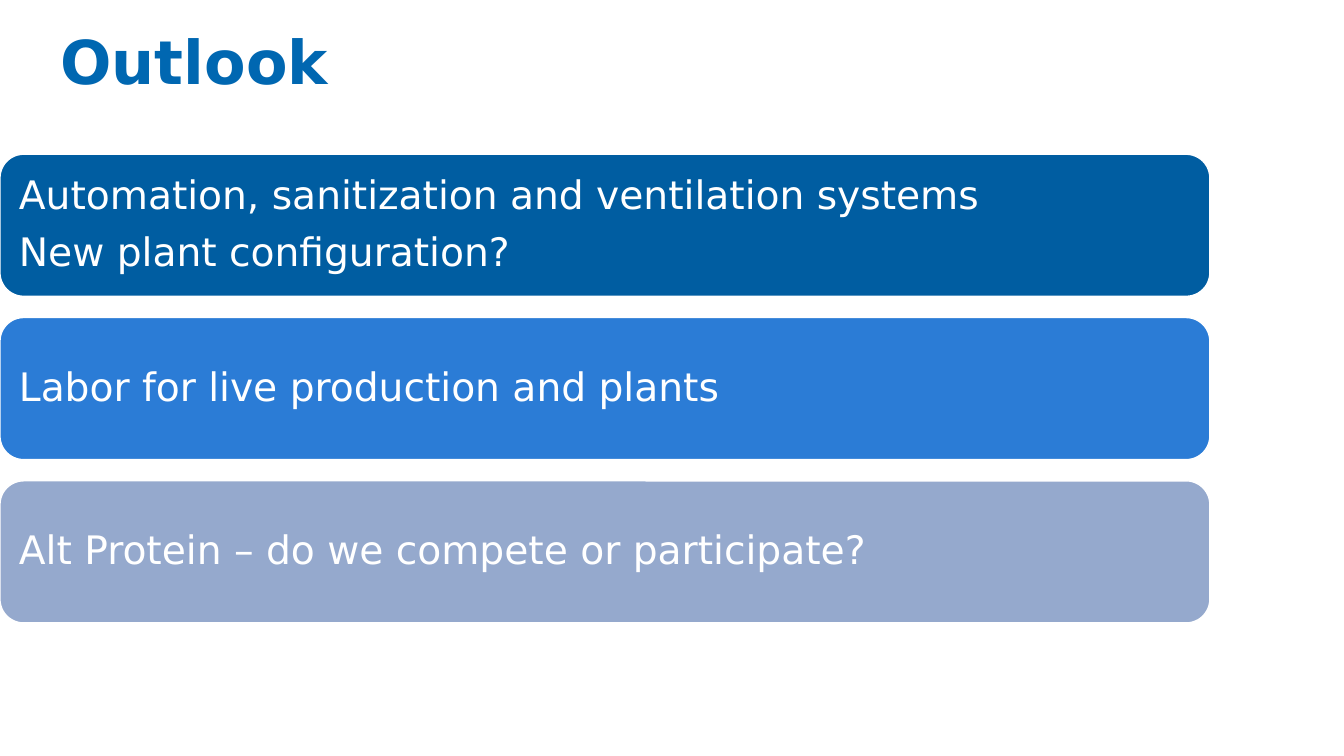
from pptx import Presentation
from pptx.dml.color import RGBColor
from pptx.enum.shapes import MSO_SHAPE
from pptx.enum.text import MSO_ANCHOR, PP_ALIGN
from pptx.util import Inches, Pt

WHITE = RGBColor(0xFF, 0xFF, 0xFF)
TITLE_BLUE = RGBColor(0x00, 0x67, 0xB1)
DEEP_BLUE = RGBColor(0x00, 0x5D, 0xA1)
BRIGHT_BLUE = RGBColor(0x2B, 0x7C, 0xD6)
PALE_BLUE = RGBColor(0x95, 0xA9, 0xCD)
FONT = "DejaVu Sans"

TITLE = "Outlook"
TOPICS = [
    (DEEP_BLUE, ["Automation, sanitization and ventilation systems",
                 "New plant configuration?"]),
    (BRIGHT_BLUE, ["Labor for live production and plants"]),
    (PALE_BLUE, ["Alt Protein – do we compete or participate?"]),
]

BAR_WIDTH, BAR_HEIGHT = 12, 1.41
FIRST_TOP, ROW_STEP = 1.53, 1.62
INSET = Inches(0.12)


def add_line(paragraph, text, size, color, bold=False):
    paragraph.alignment = PP_ALIGN.LEFT
    paragraph.line_spacing = 0.9
    run = paragraph.add_run()
    run.text = text
    run.font.name = FONT
    run.font.size = Pt(size)
    run.font.bold = bold
    run.font.color.rgb = color


def add_title(slide):
    title = slide.shapes.title
    title.left, title.top = Inches(0.5), Inches(0.27)
    title.width, title.height = Inches(12), Inches(1.25)
    title.text_frame.vertical_anchor = MSO_ANCHOR.TOP
    add_line(title.text_frame.paragraphs[0], TITLE, 43.2, TITLE_BLUE, bold=True)


def add_topic(slide, row, color, lines):
    bar = slide.shapes.add_shape(
        MSO_SHAPE.ROUNDED_RECTANGLE, 0, Inches(FIRST_TOP + row * ROW_STEP),
        Inches(BAR_WIDTH), Inches(BAR_HEIGHT))
    bar.shadow.inherit = False
    bar.fill.solid()
    bar.fill.fore_color.rgb = color
    bar.line.color.rgb = WHITE
    bar.line.width = Pt(1)
    frame = bar.text_frame
    frame.word_wrap = True
    frame.vertical_anchor = MSO_ANCHOR.MIDDLE
    frame.margin_left = frame.margin_right = INSET
    frame.margin_top = frame.margin_bottom = INSET
    for index, text in enumerate(lines):
        paragraph = frame.add_paragraph() if index else frame.paragraphs[0]
        add_line(paragraph, text, 28, WHITE)
        if index < len(lines) - 1:
            paragraph.space_after = Pt(10.5)


def main():
    presentation = Presentation()
    presentation.slide_width = Inches(13.33)
    presentation.slide_height = Inches(7.5)
    slide = presentation.slides.add_slide(presentation.slide_layouts[5])
    add_title(slide)
    for row, (color, lines) in enumerate(TOPICS):
        add_topic(slide, row, color, lines)
    presentation.save("out.pptx")


if __name__ == "__main__":
    main()
